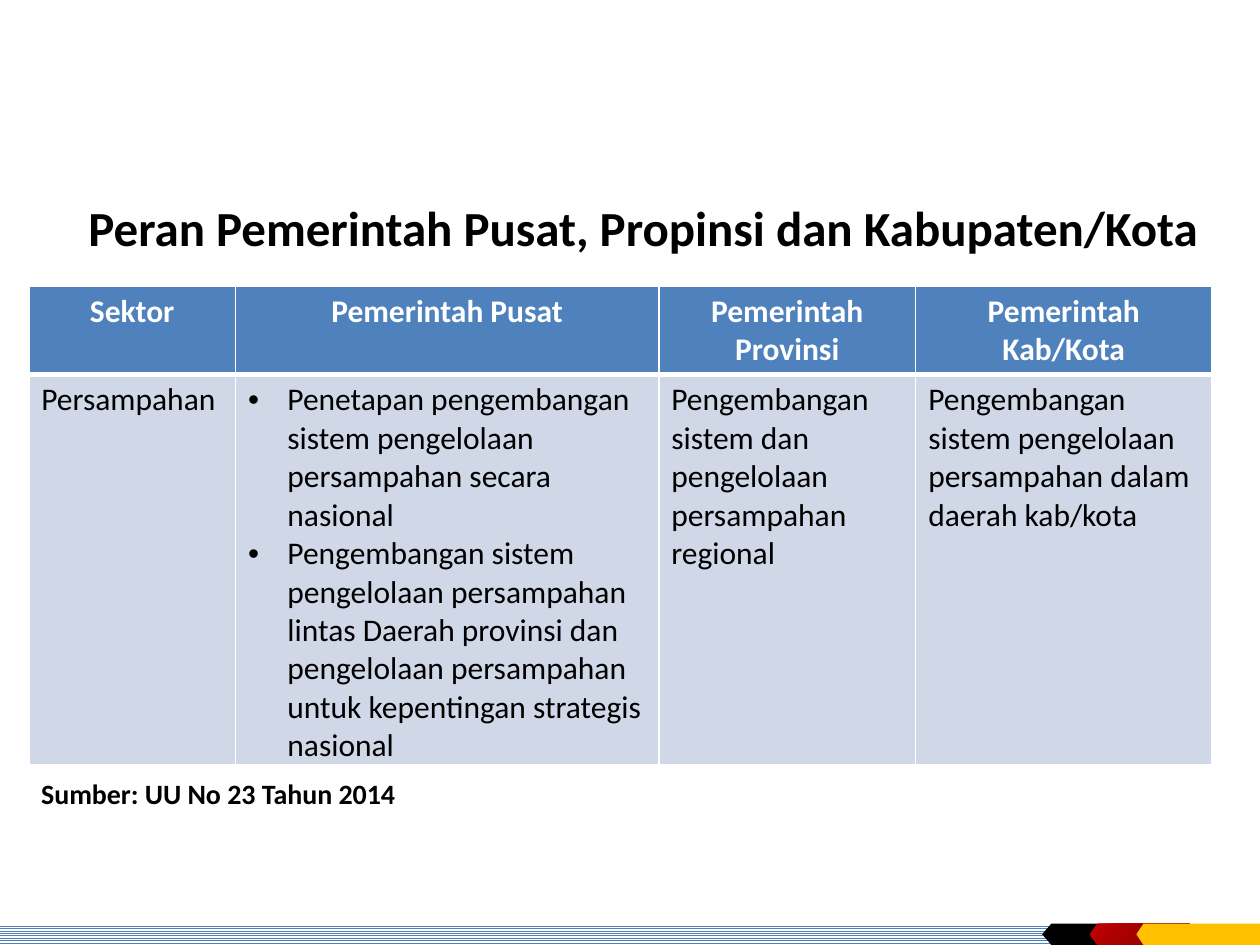
import pptx
import pptx.dml.color
import pptx.enum.dml
import pptx.enum.shapes
import pptx.enum.text
import pptx.oxml
import pptx.oxml.ns
import pptx.util

Cm = pptx.util.Cm
Pt = pptx.util.Pt
SHAPE = pptx.enum.shapes.MSO_SHAPE
ALIGN = pptx.enum.text.PP_ALIGN
NS = pptx.oxml.ns.nsdecls("a")

HUES = {
    "blue": "4F81BD",
    "pale": "D0D8E8",
    "white": "FFFFFF",
    "black": "000000",
    "gold": "FFC000",
}
REDS = [(0, "720000"), (50, "A20000"), (100, "C00000")]

COLS = [4.17, 8.53, 5.18, 5.97]
ROWS = [1.75, 7.77]
HEADS = ["Sektor", "Pemerintah Pusat", "Pemerintah Provinsi", "Pemerintah Kab/Kota"]
ROLES = [
    ["Persampahan"],
    [
        "Penetapan pengembangan sistem pengelolaan persampahan secara nasional",
        "Pengembangan sistem pengelolaan persampahan lintas Daerah provinsi dan "
        "pengelolaan persampahan untuk kepentingan strategis nasional",
    ],
    ["Pengembangan sistem dan pengelolaan persampahan regional"],
    ["Pengembangan sistem pengelolaan persampahan dalam daerah kab/kota"],
]


def rgb(hue):
    return pptx.dml.color.RGBColor.from_string(HUES[hue])


def style(para, size, hue="black", bold=False, align=ALIGN.LEFT):
    para.alignment = align
    font = para.font
    font.name, font.size, font.bold = "Calibri", Pt(size), bold
    font.color.rgb = rgb(hue)


def add_text(slide, box, text, size, align=ALIGN.LEFT, wrap=True):
    frame = slide.shapes.add_textbox(*map(Cm, box)).text_frame
    frame.word_wrap = wrap
    frame.text = text
    style(frame.paragraphs[0], size, bold=True, align=align)
    return frame


def add_block(slide, kind, box):
    block = slide.shapes.add_shape(kind, *map(Cm, box))
    block.shadow.inherit = False
    block.line.fill.background()
    return block


def add_plate(slide, left, width, point, hue=None):
    plate = add_block(slide, SHAPE.PENTAGON, (left, 18.62, width, 0.43))
    plate.adjustments[0] = point
    props = plate.element.spPr
    props.get_or_add_xfrm().set("flipH", "1")
    if hue:
        plate.fill.solid()
        plate.fill.fore_color.rgb = rgb(hue)
        return
    # Red plate: round gradient from one corner
    stops = "".join(
        f'<a:gs pos="{pos * 1000}"><a:srgbClr val="{red}"/></a:gs>' for pos, red in REDS
    )
    grad = pptx.oxml.parse_xml(
        f'<a:gradFill {NS} rotWithShape="1"><a:gsLst>{stops}</a:gsLst>'
        '<a:path path="circle"><a:fillToRect l="100000" t="100000"/></a:path></a:gradFill>'
    )
    plate.fill.background()
    props.replace(props.find(pptx.oxml.ns.qn("a:noFill")), grad)


def add_bullet(para):
    props = para._p.get_or_add_pPr()
    props.set("marL", str(Cm(0.79)))
    props.set("indent", str(-Cm(0.79)))
    for tag in ('buFont {} typeface="Arial"', 'buChar {} char="•"'):
        props.append(pptx.oxml.parse_xml(f"<a:{tag.format(NS)}/>"))


def set_edges(cell, base):
    props = cell._tc.get_or_add_tcPr()
    widths = {"L": 1, "R": 1, "T": 1, "B": base}
    for place, (side, width) in enumerate(widths.items()):
        edge = pptx.oxml.parse_xml(
            f'<a:ln{side} {NS} w="{Pt(width)}"><a:solidFill>'
            f'<a:srgbClr val="{HUES["white"]}"/></a:solidFill></a:ln{side}>'
        )
        props.insert(place, edge)


def fill_cell(cell, lines, head):
    cell.fill.solid()
    cell.fill.fore_color.rgb = rgb("blue" if head else "pale")
    set_edges(cell, 3 if head else 1)
    cell.text = "\n".join(lines)
    for para in cell.text_frame.paragraphs:
        if len(lines) > 1:
            add_bullet(para)
        if head:
            style(para, 18, "white", True, ALIGN.CENTER)
        else:
            style(para, 18)


def add_roles(slide):
    box = (0.58, 5.77, sum(COLS), sum(ROWS))
    table = slide.shapes.add_table(len(ROWS), len(COLS), *map(Cm, box)).table
    for row, height in zip(table.rows, ROWS):
        row.height = Cm(height)
    for num, width in enumerate(COLS):
        table.columns[num].width = Cm(width)
        fill_cell(table.cell(0, num), [HEADS[num]], True)
        fill_cell(table.cell(1, num), ROLES[num], False)


def add_footer(slide):
    band = add_block(slide, SHAPE.RECTANGLE, (0, 18.62, 21.29, 0.41))
    band.fill.patterned()
    band.fill.pattern = pptx.enum.dml.MSO_PATTERN.LIGHT_HORIZONTAL
    band.fill.fore_color.rgb = rgb("blue")
    band.fill.back_color.rgb = rgb("white")
    add_plate(slide, 21.01, 2.41, 0.43, "black")
    add_plate(slide, 21.97, 2.01, 0.36)
    add_plate(slide, 22.91, 2.49, 0.33, "gold")


def main():
    deck = pptx.Presentation()
    deck.slide_width, deck.slide_height = Cm(25.4), Cm(19.05)
    slide = deck.slides.add_slide(deck.slide_layouts[6])

    # Footer band
    add_footer(slide)

    # Title
    title = "Peran Pemerintah Pusat, Propinsi dan Kabupaten/Kota"
    frame = add_text(slide, (0.53, 3.58, 24.87, 1.98), title, 28, ALIGN.CENTER)
    frame.vertical_anchor = pptx.enum.text.MSO_ANCHOR.MIDDLE

    # Table of roles and its source
    add_roles(slide)
    source = "Sumber: UU No 23 Tahun 2014"
    frame = add_text(slide, (0.58, 15.52, 7.75, 0.94), source, 16, wrap=False)
    frame.auto_size = pptx.enum.text.MSO_AUTO_SIZE.SHAPE_TO_FIT_TEXT

    deck.save("out.pptx")


if __name__ == "__main__":
    main()
